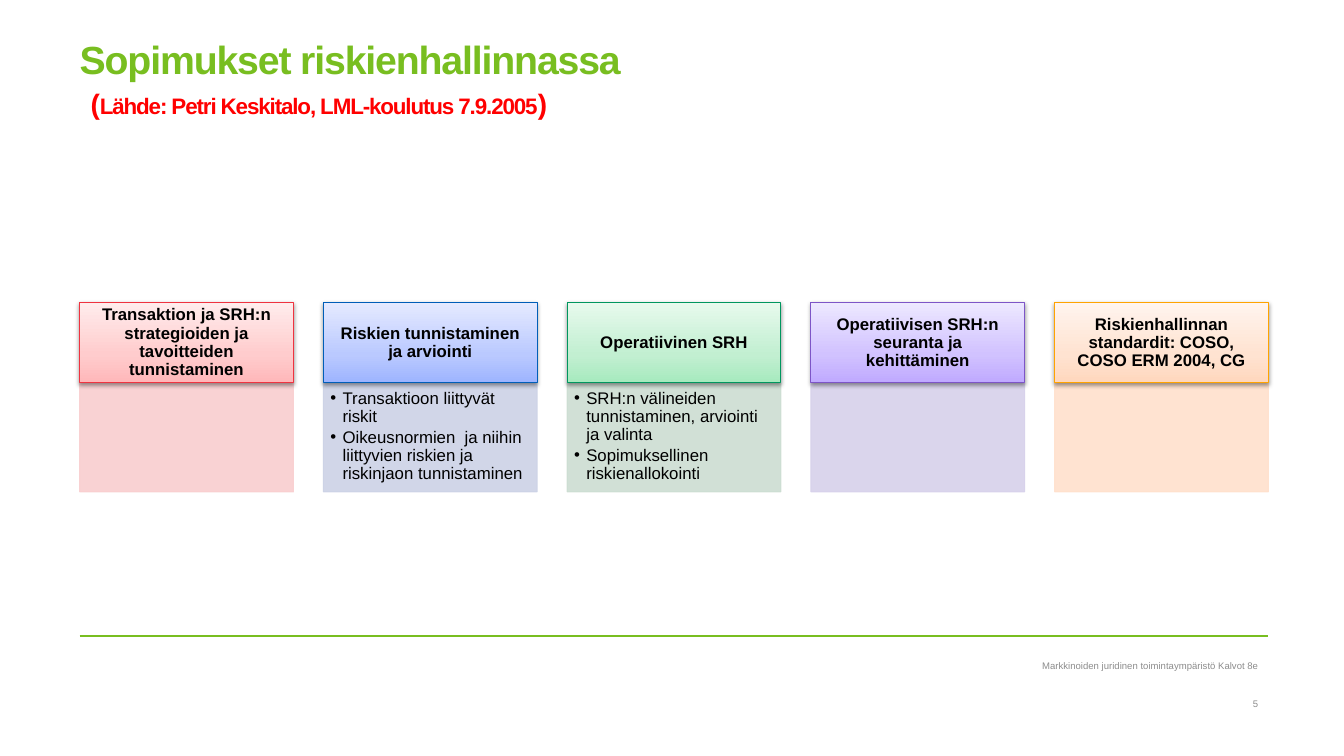
from copy import deepcopy

from lxml import etree
from pptx import Presentation
from pptx.dml.color import RGBColor
from pptx.enum.shapes import MSO_CONNECTOR, MSO_SHAPE
from pptx.enum.text import MSO_ANCHOR, MSO_AUTO_SIZE, PP_ALIGN
from pptx.oxml import parse_xml
from pptx.oxml.ns import nsdecls, qn
from pptx.util import Inches, Pt

TITLE = "Sopimukset riskienhallinnassa"
SOURCE = [("(", 20), ("Lähde: Petri Keskitalo, LML-koulutus 7.9.2005", 16), (")", 20)]
FOOTERS = [("Markkinoiden juridinen toimintaympäristö Kalvot 8e", 6.51), ("5", 6.89)]

# heading, bullets, outline, body fill, gradient stops from bottom to top
STAGES = [
    ("Transaktion ja SRH:n strategioiden ja tavoitteiden tunnistaminen", [],
     RGBColor(0xEF, 0x33, 0x40), RGBColor(0xF9, 0xCE, 0xCF), ("FFB7B9", "FFCCCD", "FFECEC")),
    ("Riskien tunnistaminen ja arviointi",
     ["Transaktioon liittyvät riskit",
      "Oikeusnormien  ja niihin liittyvien riskien ja riskinjaon tunnistaminen"],
     RGBColor(0x00, 0x5E, 0xB8), RGBColor(0xCC, 0xD2, 0xE6), ("9DB4FF", "BAC9FF", "E5EAFF")),
    ("Operatiivinen SRH",
     ["SRH:n välineiden tunnistaminen, arviointi ja valinta",
      "Sopimuksellinen riskienallokointi"],
     RGBColor(0x00, 0x96, 0x5E), RGBColor(0xCC, 0xDD, 0xD2), ("A6EABE", "C2EFD1", "E7FAED")),
    ("Operatiivisen SRH:n seuranta ja kehittäminen", [],
     RGBColor(0x7D, 0x55, 0xC7), RGBColor(0xD7, 0xD1, 0xEB), ("BFA9FF", "D1C2FF", "EDE8FF")),
    ("Riskienhallinnan standardit: COSO, COSO ERM 2004, CG", [],
     RGBColor(0xFF, 0xA3, 0x00), RGBColor(0xFF, 0xE0, 0xCC), ("FFD7BD", "FFE3D1", "FFF4EE")),
]

GREEN = RGBColor(0x78, 0xBE, 0x20)
RED = RGBColor(0xFF, 0x00, 0x00)
GREY = RGBColor(0x8C, 0x8C, 0x8C)
BLACK = RGBColor(0x00, 0x00, 0x00)
RECT = MSO_SHAPE.RECTANGLE
STRAIGHT = MSO_CONNECTOR.STRAIGHT
TOP, MIDDLE = MSO_ANCHOR.TOP, MSO_ANCHOR.MIDDLE
LEFT, CENTER, RIGHT = PP_ALIGN.LEFT, PP_ALIGN.CENTER, PP_ALIGN.RIGHT
NO_AUTOSIZE = MSO_AUTO_SIZE.NONE

MARGIN, CONTENT_W = 0.79, 11.79
STAGE_W, HEAD_TOP, HEAD_H, BODY_H = 2.12, 3, 0.8, 1.08
STEP = (CONTENT_W - STAGE_W) / (len(STAGES) - 1)


def add_text(p, text, size=12, color=BLACK, bold=False, spacing=None):
    """Append a formatted run to a paragraph."""
    r = p.add_run()
    r.text = text
    r.font.name = "Arial"
    r.font.size = Pt(size)
    r.font.bold = bold
    r.font.color.rgb = color
    if spacing is not None:
        r._r.get_or_add_rPr().set("spc", str(spacing))
    return r


def set_frame(tf, insets, anchor):
    """Set the insets and anchor of a wrapping text frame."""
    tf.word_wrap = True
    tf.auto_size = NO_AUTOSIZE
    tf.vertical_anchor = anchor
    tf.margin_left, tf.margin_top, tf.margin_right, tf.margin_bottom = map(Inches, insets)


def add_box(s, x, y, h, line):
    """Add an outlined rectangle of stage width."""
    sp = s.shapes.add_shape(RECT, Inches(x), Inches(y), Inches(STAGE_W), Inches(h))
    sp.shadow.inherit = False
    sp.line.color.rgb = line
    sp.line.width = Pt(0.75)
    return sp


def style_heading(sp, colors):
    """Give a heading its vertical gradient and soft shadow."""
    sp.fill.gradient()
    grad = sp._element.spPr.find(qn("a:gradFill"))
    stops = "".join(f'<a:gs pos="{pos}"><a:srgbClr val="{c}"/></a:gs>'
                    for pos, c in zip((0, 35000, 100000), colors))
    grad.getparent().replace(grad, parse_xml(
        f'<a:gradFill {nsdecls("a")} rotWithShape="1"><a:gsLst>{stops}</a:gsLst>'
        '<a:lin ang="16200000" scaled="0"/></a:gradFill>'))
    sp._element.spPr.find(qn("a:effectLst")).append(parse_xml(
        f'<a:outerShdw {nsdecls("a")} blurRad="{Pt(3.1)}" dist="{Pt(1.6)}" dir="5400000" '
        'rotWithShape="0"><a:srgbClr val="000000"><a:alpha val="38000"/></a:srgbClr>'
        '</a:outerShdw>'))


def add_bullet(p):
    """Turn a paragraph into a hanging bullet."""
    pPr = p._p.get_or_add_pPr()
    pPr.set("marL", str(Inches(0.12)))
    pPr.set("indent", str(-Inches(0.12)))
    etree.SubElement(pPr, qn("a:buFont")).set("typeface", "Arial")
    etree.SubElement(pPr, qn("a:buChar")).set("char", "•")


def add_stage(s, x, heading, bullets, line, fill, colors):
    """Add one column with its body and heading."""
    body = add_box(s, x, HEAD_TOP + HEAD_H, BODY_H, fill)
    body.fill.solid()
    body.fill.fore_color.rgb = fill
    for clr in body._element.spPr.iter(qn("a:srgbClr")):
        etree.SubElement(clr, qn("a:alpha")).set("val", "90000")
    tf = body.text_frame
    set_frame(tf, (0.07, 0.07, 0.09, 0.1), TOP)
    for i, text in enumerate(bullets):
        p = tf.add_paragraph() if i else tf.paragraphs[0]
        add_bullet(p)
        p.alignment = LEFT
        p.line_spacing = 0.9
        p.space_after = Pt(1.8)
        add_text(p, text)

    head = add_box(s, x, HEAD_TOP, HEAD_H, line)
    style_heading(head, colors)
    set_frame(head.text_frame, (0.09, 0.05, 0.09, 0.05), MIDDLE)
    p = head.text_frame.paragraphs[0]
    p.alignment = CENTER
    p.line_spacing = 0.9
    add_text(p, heading, bold=True)


def add_title(s):
    """Fill the title placeholder with the heading and its source line."""
    sp = s.shapes.title
    sp.left, sp.top, sp.width, sp.height = map(Inches, (MARGIN, 0.42, CONTENT_W, 1.31))
    set_frame(sp.text_frame, (0, 0, 0, 0), TOP)
    p = sp.text_frame.paragraphs[0]
    p.alignment = LEFT
    p.line_spacing = 0.85
    r = add_text(p, TITLE, size=28, color=GREEN, bold=True, spacing=-80)
    p.add_line_break()
    p._p.find(qn("a:br")).append(deepcopy(r._r.rPr))
    add_text(p, " ", size=28, color=GREEN, bold=True, spacing=-80)
    for text, size in SOURCE:
        add_text(p, text, size=size, color=RED, bold=True, spacing=-80)


def add_footer(s):
    """Add the rule and the right-aligned footer texts."""
    rule = s.shapes.add_connector(STRAIGHT, Inches(MARGIN), Inches(6.31),
                                  Inches(MARGIN + CONTENT_W), Inches(6.31))
    rule.line.color.rgb = GREEN
    rule.line.width = Pt(1)
    etree.SubElement(rule._element.spPr, qn("a:effectLst"))
    for text, y in FOOTERS:
        sp = s.shapes.add_textbox(Inches(7.2), Inches(y), Inches(5.28), Inches(0.18))
        set_frame(sp.text_frame, (0.1, 0.05, 0, 0.05), MIDDLE)
        p = sp.text_frame.paragraphs[0]
        p.alignment = RIGHT
        add_text(p, text, size=6.8, color=GREY)


def main():
    """Build the slide and save it."""
    prs = Presentation()
    prs.slide_width, prs.slide_height = Inches(13.33), Inches(7.5)
    s = prs.slides.add_slide(prs.slide_layouts[5])
    add_title(s)
    add_footer(s)
    for i, stage in enumerate(STAGES):
        add_stage(s, MARGIN + i * STEP, *stage)
    prs.save("out.pptx")


if __name__ == "__main__":
    main()
